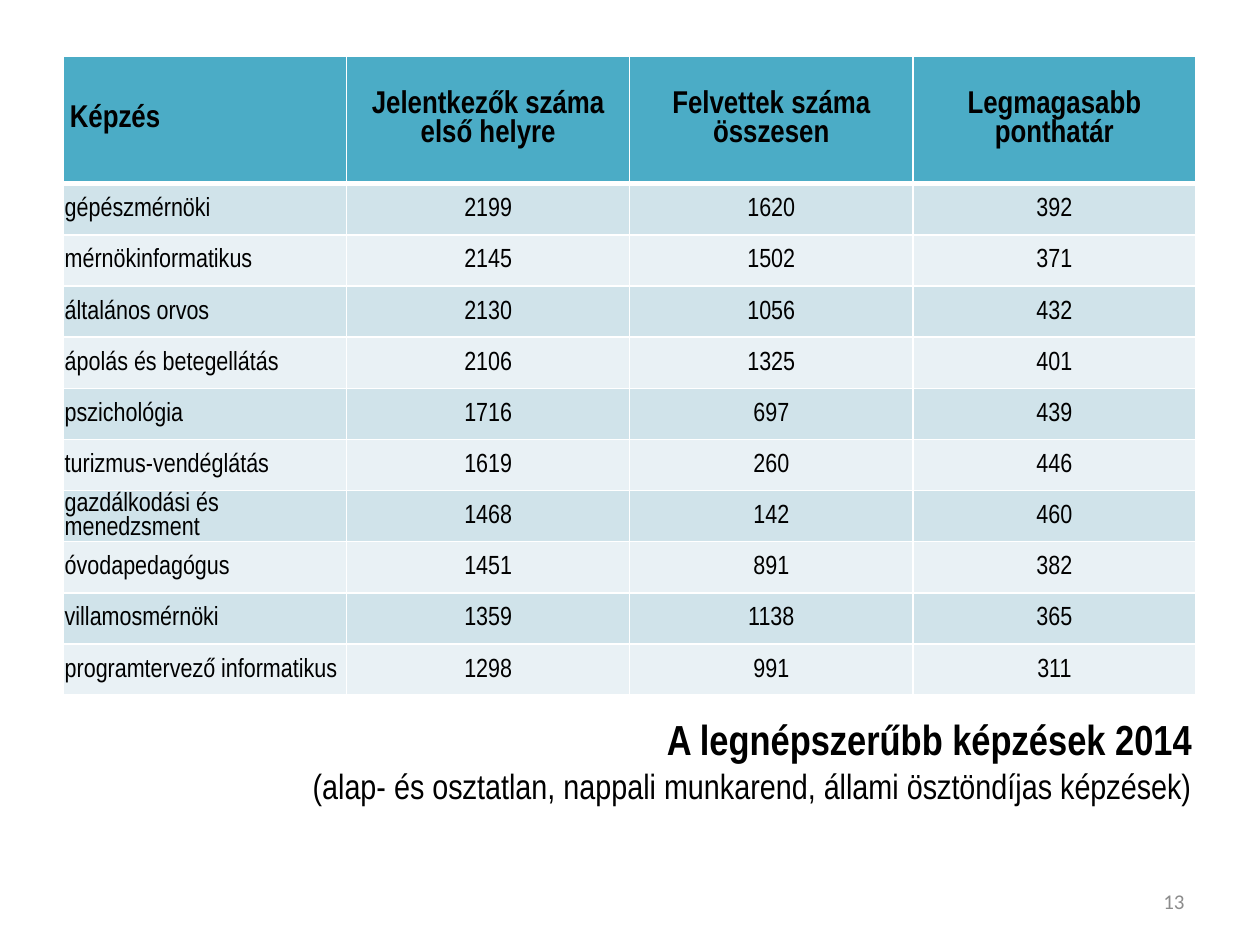
from dataclasses import dataclass

from lxml import etree
from pptx import Presentation
from pptx import util as u
from pptx.dml.color import RGBColor
from pptx.enum import text
from pptx.oxml.ns import qn

Pt = u.Pt


@dataclass(frozen=True)
class Theme:
    font: str = "Arial Narrow"
    number_font: str = "Calibri"
    ink: str = "000000"
    muted: str = "8C8C8C"
    header: str = "4BACC6"
    bands: tuple = ("D0E3EA", "E9F1F5")
    border: str = "FFFFFF"
    title_size: int = 24
    subtitle_size: int = 20
    header_size: int = 18
    body_size: int = 15
    number_size: int = 12


THEME = Theme()
HEADERS = ("Képzés", "Jelentkezők száma első helyre",
           "Felvettek száma összesen", "Legmagasabb ponthatár")
PROGRAMMES = (
    ("gépészmérnöki", 2199, 1620, 392),
    ("mérnökinformatikus", 2145, 1502, 371),
    ("általános orvos", 2130, 1056, 432),
    ("ápolás és betegellátás", 2106, 1325, 401),
    ("pszichológia", 1716, 697, 439),
    ("turizmus-vendéglátás", 1619, 260, 446),
    ("gazdálkodási és menedzsment", 1468, 142, 460),
    ("óvodapedagógus", 1451, 891, 382),
    ("villamosmérnöki", 1359, 1138, 365),
    ("programtervező informatikus", 1298, 991, 311),
)


def style_font(font, size, color=THEME.ink, bold=False, name=THEME.font):
    font.name, font.size, font.bold = name, Pt(size), bold
    font.color.rgb = RGBColor.from_string(color)


def set_borders(cell, bottom):
    """Draw the cell's four edges; they precede the fill in the XML."""
    tcPr = cell._tc.get_or_add_tcPr()
    for i, (side, width) in enumerate((("L", 1), ("R", 1), ("T", 1), ("B", bottom))):
        ln = etree.Element(qn(f"a:ln{side}"), w=str(Pt(width)))
        fill = etree.SubElement(ln, qn("a:solidFill"))
        etree.SubElement(fill, qn("a:srgbClr"), val=THEME.border)
        tcPr.insert(i, ln)


def fill_cell(cell, value, fill, size, margin, centred, header):
    cell.fill.solid()
    cell.fill.fore_color.rgb = RGBColor.from_string(fill)
    cell.vertical_anchor = text.MSO_ANCHOR.MIDDLE
    cell.margin_left = cell.margin_right = cell.margin_top = Pt(margin)
    cell.margin_bottom = Pt(margin if header else 0)
    cell.text_frame.text = str(value)
    p = cell.text_frame.paragraphs[0]
    p.alignment = text.PP_ALIGN.CENTER if centred else text.PP_ALIGN.LEFT
    style_font(p.runs[0].font, size, bold=header)
    set_borders(cell, 3 if header else 1)


def add_programme_table(s, x, y, w, h, header_h):
    rows = (HEADERS,) + PROGRAMMES
    table = s.shapes.add_table(len(rows), len(HEADERS), Pt(x), Pt(y), Pt(w), Pt(h)).table
    for column in table.columns:
        column.width = Pt(w / len(HEADERS))
    for r, values in enumerate(rows):
        header = r == 0
        table.rows[r].height = Pt(header_h if header else (h - header_h) / len(PROGRAMMES))
        fill = THEME.header if header else THEME.bands[(r - 1) % 2]
        size = THEME.header_size if header else THEME.body_size
        for c, value in enumerate(values):
            fill_cell(table.cell(r, c), value, fill, size,
                      3.6 if header else 0.7, c > 0, header)


def add_title(s, x, y, w, h):
    sp = s.shapes.title
    sp.left, sp.top, sp.width, sp.height = Pt(x), Pt(y), Pt(w), Pt(h)
    tf = sp.text_frame
    tf.word_wrap = True
    tf.auto_size = text.MSO_AUTO_SIZE.NONE
    tf.vertical_anchor = text.MSO_ANCHOR.MIDDLE
    tf.text = ("A legnépszerűbb képzések 2014\v"
               "(alap- és osztatlan, nappali munkarend, állami ösztöndíjas képzések)")
    p = tf.paragraphs[0]
    p.alignment = text.PP_ALIGN.RIGHT
    heading, subtitle = p.runs
    style_font(heading.font, THEME.title_size, bold=True)
    style_font(subtitle.font, THEME.subtitle_size)


def add_page_number(s, x, y, w, h, number):
    tf = s.shapes.add_textbox(Pt(x), Pt(y), Pt(w), Pt(h)).text_frame
    tf.word_wrap = True
    tf.vertical_anchor = text.MSO_ANCHOR.MIDDLE
    tf.text = str(number)
    p = tf.paragraphs[0]
    p.alignment = text.PP_ALIGN.RIGHT
    style_font(p.runs[0].font, THEME.number_size, THEME.muted, name=THEME.number_font)


def main():
    prs = Presentation()
    prs.slide_width, prs.slide_height = Pt(720), Pt(540)
    s = prs.slides.add_slide(prs.slide_layouts[5])  # title only
    add_programme_table(s, 36.3, 32, 647.2, 365.3, header_h=73)
    add_title(s, 39.6, 394.6, 648.7, 79.2)
    add_page_number(s, 516, 500.5, 168, 28.75, 13)
    prs.save("out.pptx")


if __name__ == "__main__":
    main()
